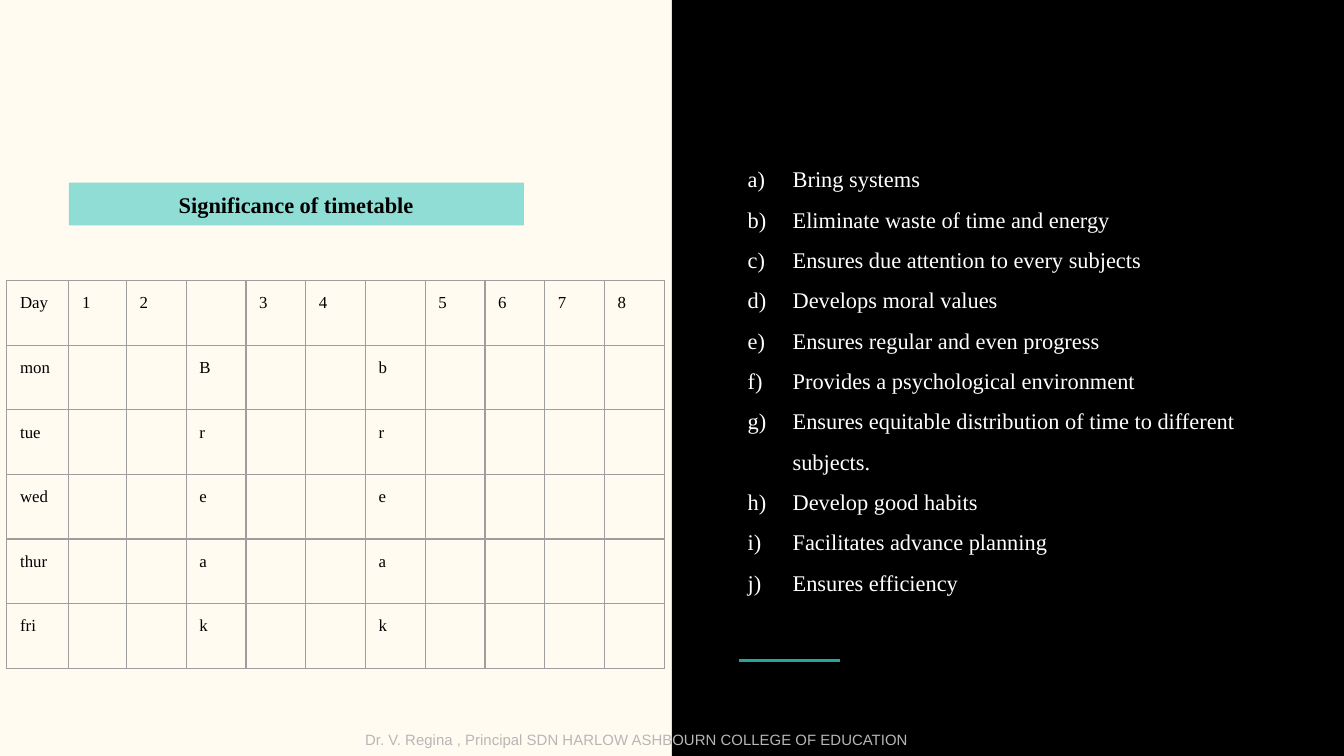
from lxml import etree
from pptx import Presentation
from pptx.dml.color import RGBColor
from pptx.enum import shapes, text
from pptx.oxml import ns
from pptx.util import Cm, Pt

TITLE = "Significance of timetable"
BENEFITS = [
    "Bring systems",
    "Eliminate waste of time and energy",
    "Ensures due attention to every subjects",
    "Develops moral values",
    "Ensures regular and even progress",
    "Provides a psychological environment",
    "Ensures equitable distribution of time to different subjects.",
    "Develop good habits",
    "Facilitates advance planning",
    "Ensures efficiency",
]
HEADER = ["Day", "1", "2", "", "3", "4", "", "5", "6", "7", "8"]
DAYS = ["mon", "tue", "wed", "thur", "fri"]
BREAKS = {3: "Break", 6: "break"}  # column: word spelled downwards
FOOTER = "Dr. V. Regina , Principal SDN HARLOW ASHBOURN COLLEGE OF EDUCATION"

CREAM = RGBColor(0xFF, 0xFB, 0xF0)
BLACK = RGBColor(0, 0, 0)
WHITE = RGBColor(0xFF, 0xFF, 0xFF)
AQUA = RGBColor(0x90, 0xDD, 0xD6)
TEAL = RGBColor(0x26, 0xA6, 0x9A)
SILVER = RGBColor(0xB7, 0xB7, 0xB7)
GRID = RGBColor(0x9E, 0x9E, 0x9E)
SERIF = "Times New Roman"

WIDTH, HEIGHT = Cm(25.4), Cm(14.28)
INSET = Cm(0.25)
COLUMN_WIDTHS = [Cm(1.17), Cm(1.09)] + [Cm(1.13)] * 9
ROW_HEIGHT = Cm(1.22)


def place(shape, left, top, width, height):
    shape.left, shape.top = Cm(left), Cm(top)
    shape.width, shape.height = Cm(width), Cm(height)


def set_font(paragraph, size, color, name=SERIF, bold=False):
    font = paragraph.font
    font.name, font.size, font.bold = name, Pt(size), bold
    font.color.rgb = color


def prepare_frame(frame):
    """Wrap at a fixed size with equal insets."""
    frame.word_wrap = True
    frame.auto_size = text.MSO_AUTO_SIZE.NONE
    frame.margin_left = frame.margin_right = INSET
    frame.margin_top = frame.margin_bottom = INSET


def add_letter_bullet(paragraph):
    properties = paragraph._p.get_or_add_pPr()
    properties.set("marL", str(Cm(1.27)))
    properties.set("indent", str(Cm(-0.85)))
    bullet = etree.Element(ns.qn("a:buAutoNum"), type="alphaLcParenR")
    properties.find(ns.qn("a:defRPr")).addprevious(bullet)


def add_borders(cell):
    properties = cell._tc.get_or_add_tcPr()
    for position, side in enumerate(("lnL", "lnR", "lnT", "lnB")):
        line = etree.Element(ns.qn(f"a:{side}"), w=str(Pt(0.75)))
        fill = etree.SubElement(line, ns.qn("a:solidFill"))
        etree.SubElement(fill, ns.qn("a:srgbClr"), val=str(GRID))
        properties.insert(position, line)


def add_backdrop(slide):
    slide.background.fill.solid()
    slide.background.fill.fore_color.rgb = CREAM
    panel = slide.shapes.add_shape(
        shapes.MSO_SHAPE.RECTANGLE, WIDTH // 2, 0, WIDTH // 2, HEIGHT)
    panel.shadow.inherit = False
    panel.fill.solid()
    panel.fill.fore_color.rgb = BLACK
    panel.line.fill.background()
    accent = slide.shapes.add_connector(
        shapes.MSO_CONNECTOR.STRAIGHT, Cm(13.97), Cm(12.48), Cm(15.88), Cm(12.48))
    accent.line.color.rgb = TEAL
    accent.line.width = Pt(1.5)
    etree.SubElement(accent._element.spPr, ns.qn("a:effectLst"))
    # Behind the placeholders
    for position, shape in enumerate((panel, accent), start=2):
        slide.shapes._spTree.insert(position, shape._element)


def add_title(slide):
    title = slide.shapes.title
    place(title, 1.3, 3.45, 8.6, 0.81)
    title.fill.solid()
    title.fill.fore_color.rgb = AQUA
    prepare_frame(title.text_frame)
    title.text_frame.vertical_anchor = text.MSO_ANCHOR.MIDDLE
    title.text_frame.text = TITLE
    paragraph = title.text_frame.paragraphs[0]
    paragraph.alignment = text.PP_ALIGN.CENTER
    set_font(paragraph, 12, BLACK, bold=True)


def add_benefits(slide):
    body = slide.placeholders[1]
    place(body, 13.46, 2.62, 11.38, 8.86)
    prepare_frame(body.text_frame)
    body.text_frame.text = "\n".join(BENEFITS)
    for paragraph in body.text_frame.paragraphs:
        paragraph.line_spacing = 1.5
        paragraph.space_before = Pt(0)
        set_font(paragraph, 12, WHITE)
        add_letter_bullet(paragraph)


def add_timetable(slide):
    rows = [HEADER]
    for index, day in enumerate(DAYS):
        letters = {column: word[index] for column, word in BREAKS.items()}
        rows.append([day] + [letters.get(column, "") for column in range(1, len(HEADER))])
    table = slide.shapes.add_table(
        len(rows), len(HEADER), Cm(0.13), Cm(5.3),
        sum(COLUMN_WIDTHS), ROW_HEIGHT * len(rows)).table
    table.first_row = table.horz_banding = False
    for column, width in zip(table.columns, COLUMN_WIDTHS):
        column.width = width
    for row, values in zip(table.rows, rows):
        row.height = ROW_HEIGHT
        for cell, value in zip(row.cells, values):
            cell.text = value
            cell.fill.background()
            cell.margin_left = cell.margin_right = INSET
            cell.margin_top = cell.margin_bottom = INSET
            set_font(cell.text_frame.paragraphs[0], 9, BLACK)
            add_borders(cell)


def add_footer(slide):
    footer = slide.shapes.add_textbox(Cm(6.65), Cm(13.56), Cm(13.84), Cm(0.72))
    prepare_frame(footer.text_frame)
    footer.text_frame.text = FOOTER
    set_font(footer.text_frame.paragraphs[0], 8, SILVER, name="Arial")


def main():
    presentation = Presentation()
    presentation.slide_width, presentation.slide_height = WIDTH, HEIGHT
    slide = presentation.slides.add_slide(presentation.slide_layouts[1])
    add_backdrop(slide)
    add_title(slide)
    add_benefits(slide)
    add_timetable(slide)
    add_footer(slide)
    presentation.save("out.pptx")


if __name__ == "__main__":
    main()
